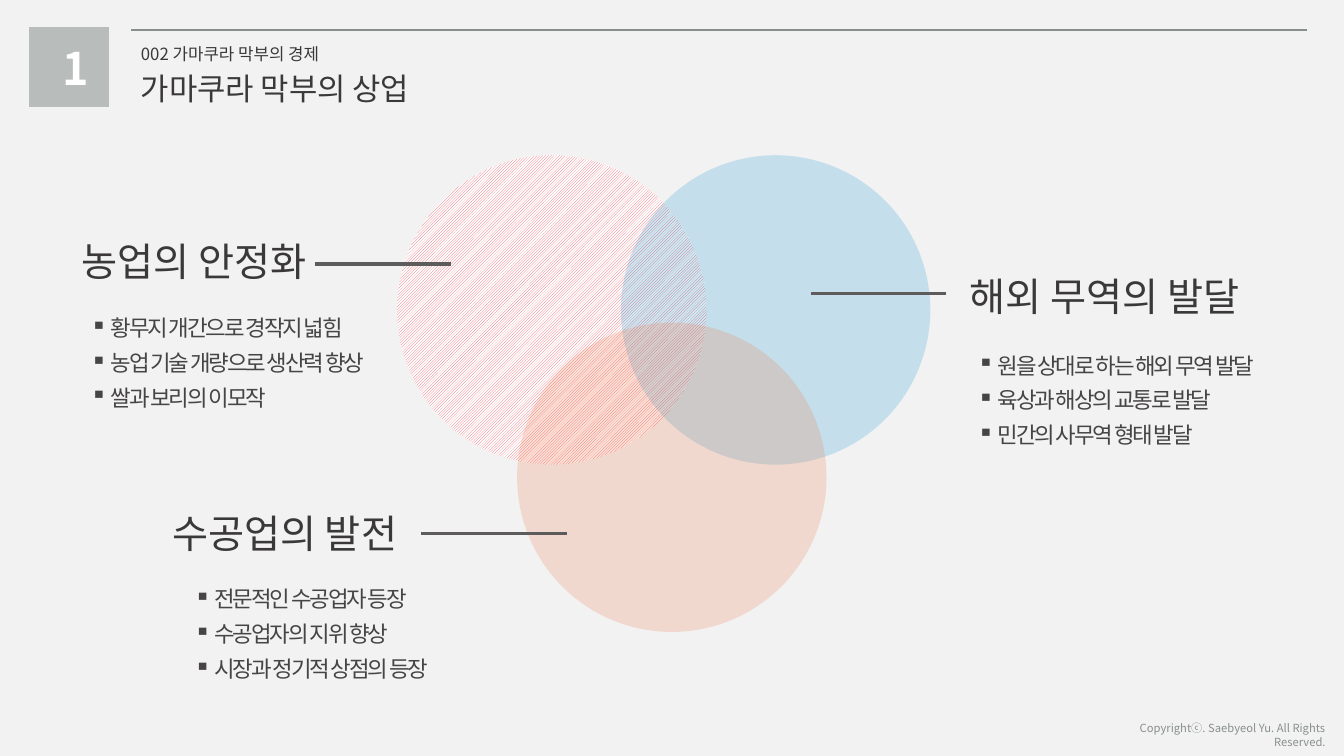
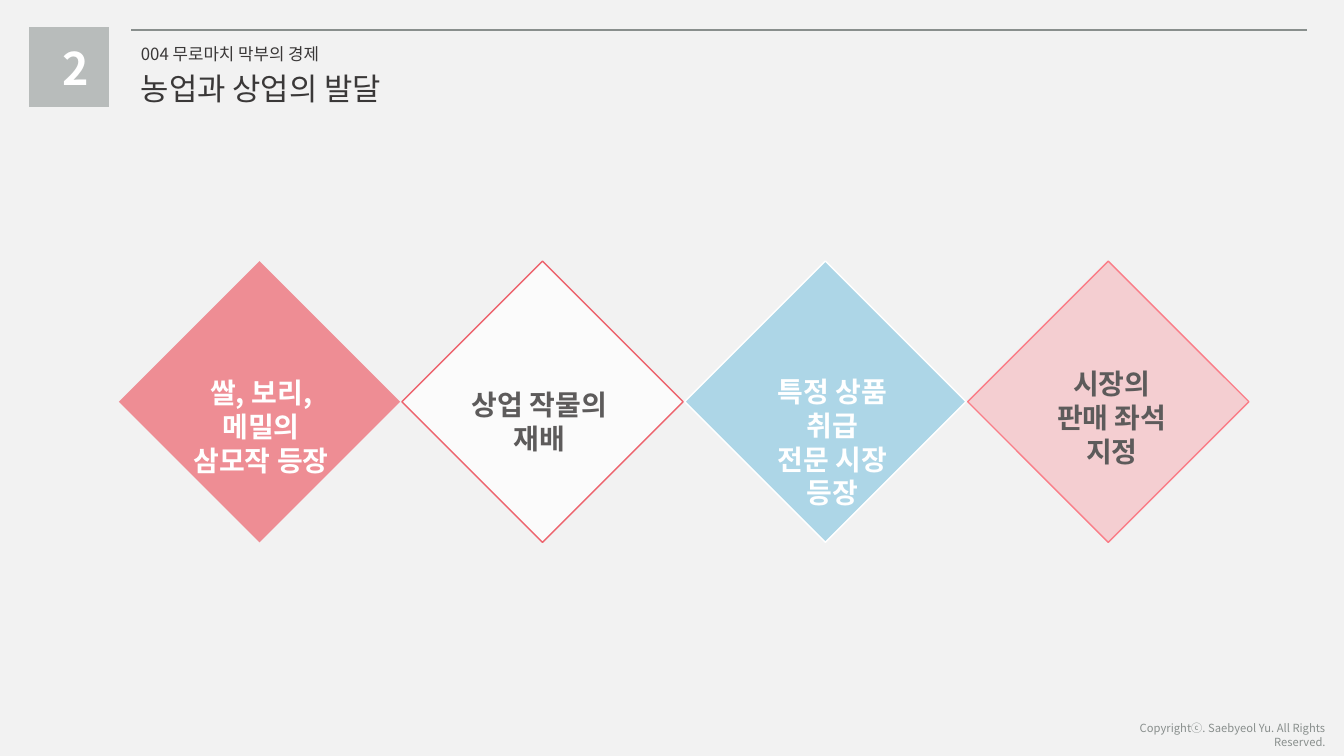
"""Build two slides on the economy of the Kamakura and Muromachi shogunates."""
from lxml.etree import SubElement
from pptx import Presentation
from pptx.dml.color import RGBColor
from pptx.enum.dml import MSO_PATTERN
from pptx.enum.shapes import MSO_CONNECTOR, MSO_SHAPE
from pptx.enum.text import PP_ALIGN
from pptx.oxml.ns import qn
from pptx.util import Inches, Pt

FONT = "Noto Sans CJK KR"
PAPER = RGBColor(0xF2, 0xF2, 0xF2)
WHITE = RGBColor(0xFF, 0xFF, 0xFF)
INK = RGBColor(0x3A, 0x38, 0x38)
BODY = RGBColor(0x46, 0x44, 0x44)
SLATE = RGBColor(0x5D, 0x5B, 0x5B)
GREY = RGBColor(0x89, 0x8F, 0x8D)
SILVER = RGBColor(0xB8, 0xBC, 0xBB)
RED = RGBColor(0xED, 0x63, 0x6D)
PINK = RGBColor(0xFA, 0x7D, 0x87)
BLUE = RGBColor(0x10, 0x97, 0xD0)
ORANGE = RGBColor(0xF1, 0x74, 0x42)

prs = Presentation()
prs.slide_width, prs.slide_height = Inches(13.33), Inches(7.5)
COL, ROW = prs.slide_width / 40, prs.slide_height / 30
prs.slide_master.background.fill.solid()
prs.slide_master.background.fill.fore_color.rgb = PAPER


def add_text(slide, col, row, cols, rows, lines, size, color,
             bold=False, align=PP_ALIGN.LEFT, bulleted=False):
    box = slide.shapes.add_textbox(
        int(col * COL), int(row * ROW), int(cols * COL), int(rows * ROW))
    frame = box.text_frame
    frame.word_wrap = True
    frame.text = "\n".join(lines)
    for paragraph in frame.paragraphs:
        paragraph.alignment = align
        font = paragraph.font
        font.size, font.bold, font.name = Pt(size), bold, FONT
        font.color.rgb = color
        properties = paragraph._p.get_or_add_pPr()
        defaults = properties.find(qn("a:defRPr"))
        SubElement(defaults, qn("a:ea"), typeface=FONT)
        if bulleted:
            paragraph.line_spacing = 1.3
            properties.set("marL", str(Inches(0.2)))
            properties.set("indent", str(-Inches(0.2)))
            defaults.set("spc", "-150")
            bullet = SubElement(properties, qn("a:buChar"), char="▪")
            defaults.addprevious(bullet)


def add_figure(slide, preset, col, row, cols, rows, color, opacity=100, outline=None):
    figure = slide.shapes.add_shape(
        preset, int(col * COL), int(row * ROW), int(cols * COL), int(rows * ROW))
    figure.shadow.inherit = False
    figure.fill.solid()
    figure.fill.fore_color.rgb = color
    if opacity < 100:
        tint = figure.fill._xPr.find(".//" + qn("a:srgbClr"))
        SubElement(tint, qn("a:alpha"), val=str(opacity * 1000))
    if outline is None:
        figure.line.fill.background()
    else:
        figure.line.color.rgb = outline
        figure.line.width = Pt(1)
    return figure


headers = [
    ("1", "002 가마쿠라 막부의 경제", "가마쿠라 막부의 상업"),
    ("2", "004 무로마치 막부의 경제", "농업과 상업의 발달"),
]
rules = []
for number, section, title in headers:
    slide = prs.slides.add_slide(prs.slide_layouts[6])
    rules.append((slide, 3.9, 38.9, 1.2, GREY, 1.5))
    add_figure(slide, MSO_SHAPE.RECTANGLE, 0.87, 1.08, 2.37, 3.16, SILVER)
    add_text(slide, 1.35, 1.4, 1.8, 2.56, [number], 32, WHITE, True, PP_ALIGN.CENTER)
    add_text(slide, 3.9, 1.52, 9, 1.2, [section], 12, INK)
    add_text(slide, 3.9, 2.56, 12, 1.88, [title], 22, INK)
    add_text(slide, 32.4, 28.44, 7.35, 0.96,
             ["Copyrightⓒ. Saebyeol Yu. All Rights Reserved."], 8, GREY,
             align=PP_ALIGN.RIGHT)
commerce, growth = prs.slides

circles = [(11.82, 6.16, WHITE, 100), (18.48, 6.16, BLUE, 20), (15.39, 12.8, ORANGE, 20)]
venn = [add_figure(commerce, MSO_SHAPE.OVAL, col, row, 9.21, 12.28, color, opacity)
        for col, row, color, opacity in circles]
hatching = venn[0].fill
hatching.patterned()
hatching.pattern = MSO_PATTERN.DARK_UPWARD_DIAGONAL
hatching.fore_color.rgb = RED
hatching.back_color.rgb = WHITE

topics = [
    ("농업의 안정화", 2.13, 9.24, (9.39, 13.41, 10.48), 2.4, 11.96,
     ["황무지 개간으로 경작지 넓힘", "농업 기술 개량으로 생산력 향상", "쌀과 보리의 이모작"]),
    ("수공업의 발전", 4.83, 20, (12.54, 16.89, 21.16), 5.49, 22.72,
     ["전문적인 수공업자 등장", "수공업자의 지위 향상", "시장과 정기적 상점의 등장"]),
    ("해외 무역의 발달", 28.56, 10.6, (24.15, 28.17, 11.64), 28.8, 13.44,
     ["원을 상대로 하는 해외 무역 발달", "육상과 해상의 교통로 발달", "민간의 사무역 형태 발달"]),
]
for heading, col, row, pointer, points_col, points_row, points in topics:
    add_text(commerce, col, row, 9, 2.28, [heading], 28, INK)
    add_text(commerce, points_col, points_row, 9.9, 4.6, points, 16, BODY, bulleted=True)
    rules.append((commerce, *pointer, SLATE, 2.25))

developments = [
    (["쌀, 보리, 메밀의", "삼모작 등장"], 5.07, 14.72, WHITE, RED, 70, None),
    (["상업 작물의 재배"], 13.35, 15.2, SLATE, WHITE, 70, RED),
    (["특정 상품 취급", "전문 시장 등장"], 22.08, 14.68, WHITE, BLUE, 30, WHITE),
    (["시장의", "판매 좌석 지정"], 30.39, 14.36, SLATE, PINK, 30, PINK),
]
for i, (lines, col, row, ink, color, opacity, outline) in enumerate(developments):
    add_figure(growth, MSO_SHAPE.DIAMOND, 3.54 + 8.42 * i, 10.36, 8.37, 11.16,
               color, opacity, outline)
    add_text(growth, col, row, 5.4, 3.08, lines, 20, ink, True, PP_ALIGN.CENTER)

for slide, start, end, row, color, width in rules:
    rule = slide.shapes.add_connector(
        MSO_CONNECTOR.STRAIGHT, int(start * COL), int(row * ROW),
        int(end * COL), int(row * ROW))
    rule.line.color.rgb = color
    rule.line.width = Pt(width)
    SubElement(rule._element.spPr, qn("a:effectLst"))

prs.save("out.pptx")
